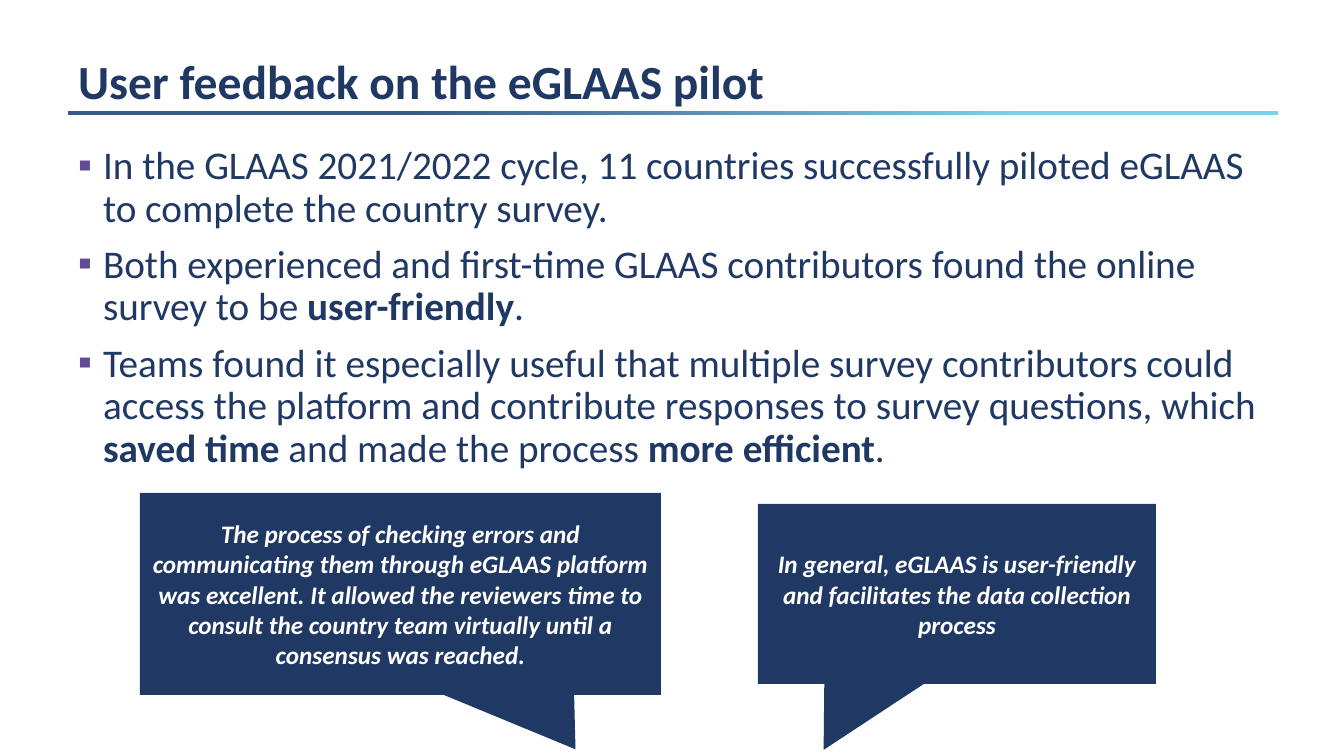
"""Build the slide on user feedback about the eGLAAS pilot."""
from lxml.etree import SubElement
from pptx import Presentation
from pptx.dml.color import RGBColor
from pptx.enum.shapes import MSO_SHAPE
from pptx.enum.text import MSO_ANCHOR, MSO_AUTO_SIZE, PP_ALIGN
from pptx.oxml.ns import qn
from pptx.util import Emu, Pt

PX = 914400 / 100.8
NAVY, WHITE, PURPLE = "203864", "FFFFFF", "634A94"
LEFT, WIDTH = 68, 1210


def box(*lengths):
    return [Emu(round(length * PX)) for length in lengths]


def style(run, size, color, bold=False, italic=False):
    run.font.name = "Calibri"
    run.font.size = Pt(size)
    run.font.bold = bold
    run.font.italic = italic
    run.font.color.rgb = RGBColor.from_string(color)


prs = Presentation()
prs.slide_width, prs.slide_height = box(1344, 756)
slide = prs.slides.add_slide(prs.slide_layouts[1])
heading, findings = slide.placeholders

underline = slide.shapes.add_shape(MSO_SHAPE.RECTANGLE, *box(LEFT, 111, WIDTH, 4))
underline.shadow.inherit = False
underline.line.fill.background()
underline.fill.gradient()
underline.fill.gradient_angle = 0
for stop, (position, color) in zip(underline.fill.gradient_stops, [(0.28, "375987"), (0.79, "7BD0EF")]):
    stop.position = position
    stop.color.rgb = RGBColor.from_string(color)

heading.left, heading.top, heading.width, heading.height = box(LEFT, 22, WIDTH, 93)
heading.text_frame.text = "User feedback on the eGLAAS pilot"
heading.text_frame.auto_size = MSO_AUTO_SIZE.NONE
heading.text_frame.vertical_anchor = MSO_ANCHOR.BOTTOM
heading_line = heading.text_frame.paragraphs[0]
heading_line.alignment = PP_ALIGN.LEFT
heading_line.line_spacing = 0.9
style(heading_line.runs[0], 34, NAVY, bold=True)

findings.left, findings.top, findings.width, findings.height = box(LEFT, 141, WIDTH, 497)
findings.text_frame.auto_size = MSO_AUTO_SIZE.NONE
points = [
    [("In the GLAAS 2021/2022 cycle, 11 countries successfully piloted eGLAAS "
      "to complete the country survey.", False)],
    [("Both experienced and first-time GLAAS contributors found the online survey to be ", False),
     ("user-friendly", True), (".", False)],
    [("Teams found it especially useful that multiple survey contributors could access the platform "
      "and contribute responses to survey questions, which ", False),
     ("saved time ", True), ("and made the process ", False), ("more efficient", True), (".", False)],
]
for index, parts in enumerate(points):
    point = findings.text_frame.paragraphs[0] if index == 0 else findings.text_frame.add_paragraph()
    point.line_spacing = 0.9
    point.space_before = Pt(10 if index else 0)
    props = point._p.get_or_add_pPr()
    indent = box(25)[0]
    props.set("marL", str(indent))
    props.set("indent", str(-indent))
    SubElement(SubElement(props, qn("a:buClr")), qn("a:srgbClr"), val=PURPLE)
    SubElement(props, qn("a:buFont"), typeface="Calibri")
    SubElement(props, qn("a:buChar"), char="▪")
    for words, bold in parts:
        run = point.add_run()
        run.text = words
        style(run, 28, NAVY, bold=bold)

quotes = [
    ((758, 504, 398, 180), (-0.335, 0.866),
     "In general, eGLAAS is user-friendly and facilitates the data collection process"),
    ((140, 493, 521, 202), (0.336, 0.769),
     "The process of checking errors and communicating them through eGLAAS platform was excellent. "
     "It allowed the reviewers time to consult the country team virtually until a consensus was reached."),
]
for place, tip, words in quotes:
    quote = slide.shapes.add_shape(MSO_SHAPE.RECTANGULAR_CALLOUT, *box(*place))
    quote.adjustments[0], quote.adjustments[1] = tip
    quote.shadow.inherit = False
    quote.fill.solid()
    quote.fill.fore_color.rgb = RGBColor.from_string(NAVY)
    quote.line.fill.background()
    quote.text_frame.text = words
    quote.text_frame.word_wrap = True
    quote.text_frame.vertical_anchor = MSO_ANCHOR.MIDDLE
    quote.text_frame.paragraphs[0].alignment = PP_ALIGN.CENTER
    style(quote.text_frame.paragraphs[0].runs[0], 18, WHITE, bold=True, italic=True)

prs.save("out.pptx")
